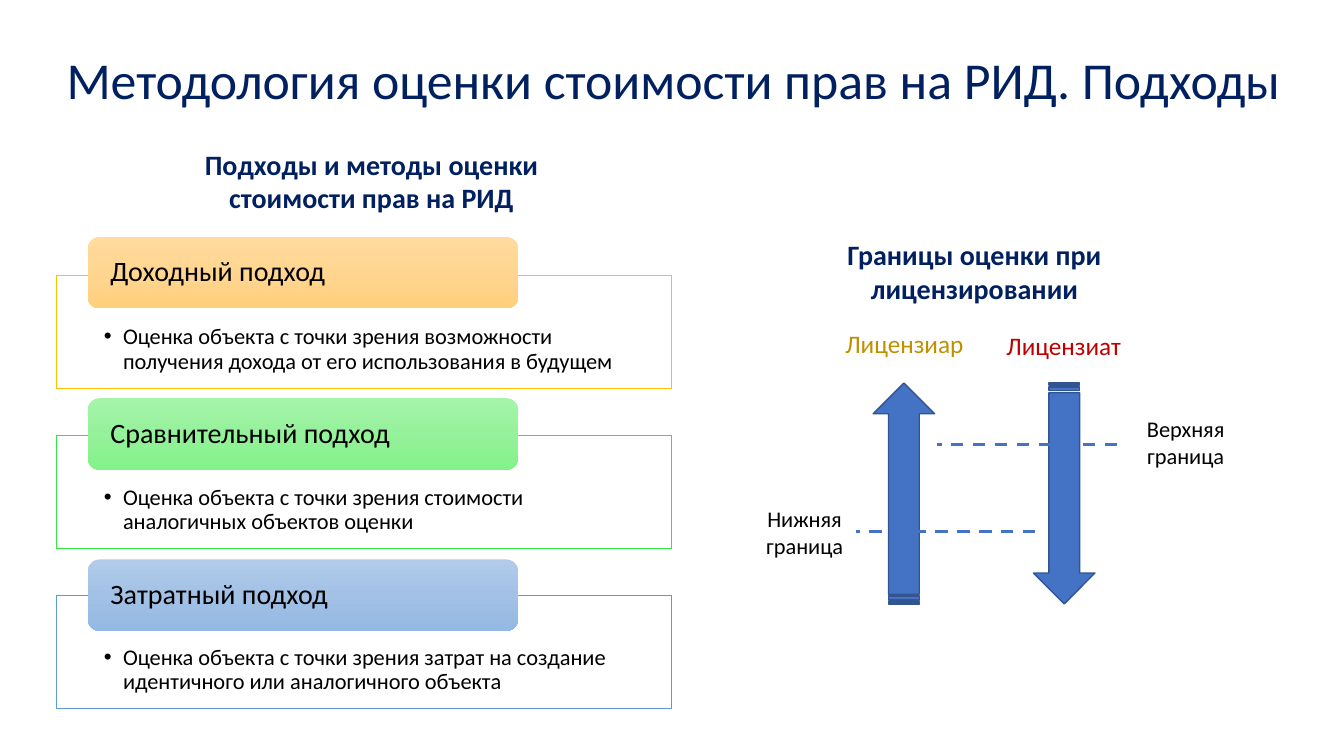
from copy import deepcopy

from lxml import etree
from pptx import Presentation
from pptx import util as u
from pptx.dml.color import RGBColor
from pptx.enum import dml, shapes, text
from pptx.oxml.ns import qn

NAVY, BLACK, BLUE = "002060", "000000", "4472C4"
MID, TOP = text.MSO_ANCHOR.MIDDLE, text.MSO_ANCHOR.TOP
LEFT, CENTER = text.PP_ALIGN.LEFT, text.PP_ALIGN.CENTER


def color(code):
    return RGBColor.from_string(code)


class Board:
    font = "Calibri"

    def __init__(self, slide):
        self.slide = slide

    def place(self, item, x, y, w, h):
        item.left, item.top = u.Inches(x), u.Inches(y)
        item.width, item.height = u.Inches(w), u.Inches(h)

    def letter(self, item, words, size, code, bold=False, align=CENTER,
               anchor=TOP, pad=(0.1, 0.05, 0.1, 0.05), lead=1.0):
        frame = item.text_frame
        frame.word_wrap = True
        frame.auto_size = text.MSO_AUTO_SIZE.NONE
        frame.vertical_anchor = anchor
        (frame.margin_left, frame.margin_top,
         frame.margin_right, frame.margin_bottom) = map(u.Inches, pad)
        para = frame.paragraphs[0]
        para.alignment, para.line_spacing = align, lead
        para.space_before = u.Pt(0)
        run = para.add_run()
        run.text = words
        run.font.name, run.font.size = self.font, u.Pt(size)
        run.font.bold = bold
        run.font.color.rgb = color(code)
        return para

    def title(self, words, *box):
        item = self.slide.shapes.title
        self.place(item, *box)
        self.letter(item, words, 37, NAVY, align=LEFT, anchor=MID,
                    pad=(0.1, 0.05, 0, 0.05), lead=0.9)

    def label(self, words, size, code, *box, bold=False):
        item = self.slide.shapes.add_textbox(*map(u.Inches, box))
        self.letter(item, words, size, code, bold)

    def panel(self, item, words, edge, *box):
        self.place(item, *box)
        item.fill.solid()
        item.fill.fore_color.rgb = color("FFFFFF")
        item.line.color.rgb = color(edge)
        item.line.width = u.Pt(0.5)
        para = self.letter(item, words, 16, BLACK, align=LEFT,
                           pad=(0.47, 0.5, 0.47, 0.12), lead=0.9)
        props = para._p.get_or_add_pPr()
        props.set("marL", str(u.Inches(0.19)))
        props.set("indent", str(-u.Inches(0.19)))
        etree.SubElement(props, qn("a:buChar")).set("char", "•")

    def shape(self, kind, *box):
        item = self.slide.shapes.add_shape(kind, *map(u.Inches, box))
        item.shadow.inherit = False
        return item

    def pill(self, words, shades, *box):
        item = self.shape(shapes.MSO_SHAPE.ROUNDED_RECTANGLE, *box)
        item.line.fill.background()
        item.fill.gradient()
        item.fill.gradient_angle = 270
        first = item._element.spPr.find(".//" + qn("a:gs"))
        first.addnext(deepcopy(first))
        for stop, spot, code in zip(item.fill.gradient_stops, (0, 0.5, 1), shades):
            stop.position = spot
            stop.color.rgb = color(code)
        self.letter(item, words, 20, BLACK, align=LEFT, anchor=MID,
                    pad=(0.19, 0, 0.19, 0), lead=0.9)

    def arrow(self, turn, *box):
        item = self.shape(shapes.MSO_SHAPE.STRIPED_RIGHT_ARROW, *box)
        item.rotation = turn
        item.fill.solid()
        item.fill.fore_color.rgb = color(BLUE)
        item.line.color.rgb = color("325491")
        item.line.width = u.Pt(1)

    def dash(self, *ends):
        item = self.slide.shapes.add_connector(
            shapes.MSO_CONNECTOR.STRAIGHT, *map(u.Inches, ends))
        item.line.color.rgb = color(BLUE)
        item.line.width = u.Pt(2.25)
        item.line.dash_style = dml.MSO_LINE.DASH
        etree.SubElement(item._element.spPr, qn("a:effectLst"))


WAYS = [
    ("Доходный подход",
     "Оценка объекта с точки зрения возможности получения дохода от его использования в будущем",
     "FFC000", ("FFDB9E", "FFD590", "FFD07C")),
    ("Сравнительный подход",
     "Оценка объекта с точки зрения стоимости аналогичных объектов оценки",
     "30E845", ("A4F4A9", "96F19B", "82F388")),
    ("Затратный подход",
     "Оценка объекта с точки зрения затрат на создание идентичного или аналогичного объекта",
     "5B9BD5", ("B1CBE9", "A3C1E5", "93B9E4")),
]


def main():
    deck = Presentation()
    deck.slide_width, deck.slide_height = u.Inches(13.33), u.Inches(7.5)
    slide = deck.slides.add_slide(deck.slide_layouts[4])
    board = Board(slide)
    board.title("Методология оценки стоимости прав на РИД. Подходы",
                0.56, 0.26, 12.28, 1.12)

    bodies = list(slide.placeholders)[1:]
    for i, (name, note, edge, shades) in enumerate(WAYS):
        board.panel(bodies[i], note, edge, 0.56, 2.73 + 1.59 * i, 6.1, 1.12)
        board.pill(name, shades, 0.87, 2.35 + 1.6 * i, 4.27, 0.71)
    for spare in bodies[len(WAYS):]:
        spare._element.getparent().remove(spare._element)

    board.label("Подходы и методы оценки стоимости прав на РИД", 20, NAVY,
                1.7, 1.41, 3.97, 0.71, bold=True)
    board.label("Границы оценки при лицензировании", 20, NAVY,
                7.47, 2.31, 4.39, 0.4, bold=True)
    board.label("Лицензиар", 18, "BF9000", 8.28, 3.21, 1.38, 0.45)
    board.label("Лицензиат", 18, "C00000", 9.86, 3.23, 1.38, 0.4)
    board.arrow(90, 9.46, 4.59, 2.19, 0.61)
    board.arrow(270, 7.87, 4.59, 2.19, 0.61)
    board.dash(11.08, 4.41, 9.29, 4.41)
    board.dash(10.27, 5.27, 8.49, 5.27)
    board.label("Верхняя граница", 16, BLACK, 11.11, 4.07, 1.3, 0.68)
    board.label("Нижняя граница", 16, BLACK, 7.29, 4.96, 1.38, 0.62)
    deck.save("out.pptx")


if __name__ == "__main__":
    main()
